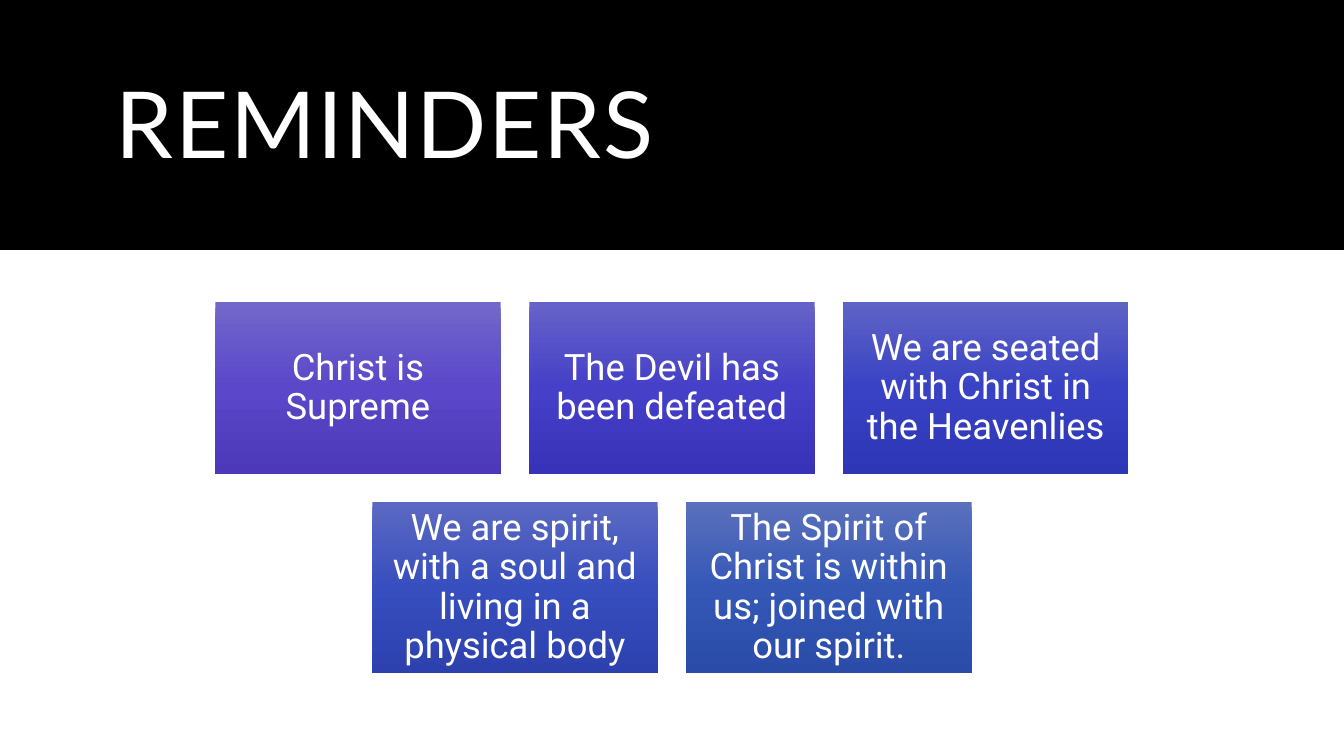
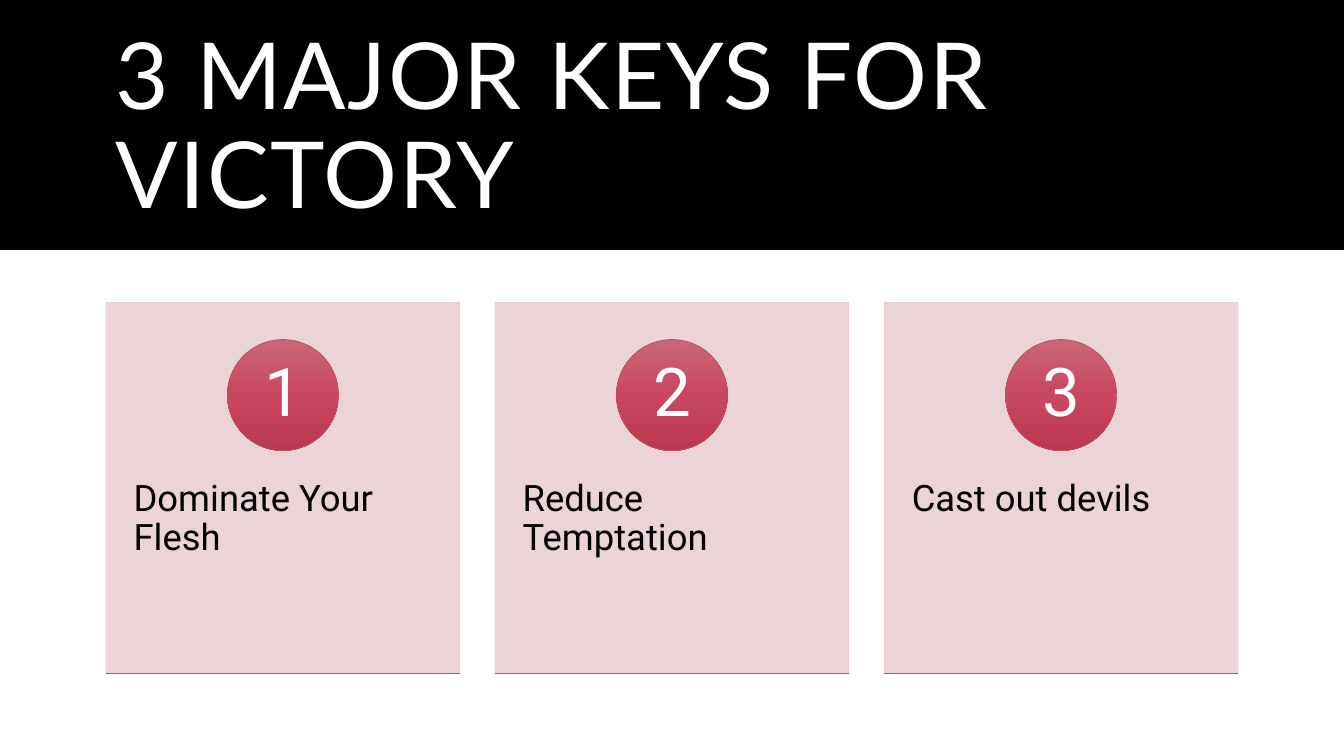
from copy import deepcopy

from lxml.etree import SubElement
from pptx import Presentation
from pptx.dml.color import RGBColor
from pptx.enum.shapes import MSO_CONNECTOR, MSO_SHAPE
from pptx.enum.text import MSO_ANCHOR, PP_ALIGN
from pptx.oxml.ns import qn
from pptx.util import Pt

# Page
SLIDE_W, SLIDE_H = 960, 540
BAND_H = 178.5
CONTENT_TOP = 216
CONTENT_H = 265

# Colours
BLACK = RGBColor(0x00, 0x00, 0x00)
WHITE = RGBColor(0xFF, 0xFF, 0xFF)
PINK = RGBColor(0xE9, 0xD0, 0xD3)
ROSE = RGBColor(0xC3, 0x4D, 0x63)
ROSE_GRADIENT = (RGBColor(0xCA, 0x67, 0x77), RGBColor(0xC9, 0x47, 0x5F),
                 RGBColor(0xB9, 0x39, 0x51))
VIOLET = (RGBColor(0x73, 0x67, 0xCA), RGBColor(0x5A, 0x47, 0xC9),
          RGBColor(0x4B, 0x39, 0xB9))
INDIGO = (RGBColor(0x66, 0x62, 0xC8), RGBColor(0x45, 0x40, 0xC7),
          RGBColor(0x37, 0x32, 0xB8))
ROYAL = (RGBColor(0x5E, 0x63, 0xC6), RGBColor(0x39, 0x42, 0xC5),
         RGBColor(0x2D, 0x36, 0xB4))
COBALT = (RGBColor(0x5C, 0x69, 0xC2), RGBColor(0x37, 0x4E, 0xBE),
          RGBColor(0x2C, 0x41, 0xAE))
STEEL = (RGBColor(0x5A, 0x70, 0xBC), RGBColor(0x35, 0x58, 0xB7),
         RGBColor(0x2A, 0x4C, 0xA8))

# Text styles
TITLE = {"name": "Lato", "size": Pt(66)}
BODY = {"name": "Roboto", "size": Pt(26)}
NUMBER = {"name": "Roboto", "size": Pt(48)}

# Content
REMINDER_ROWS = [
    [("Christ is Supreme", VIOLET),
     ("The Devil has been defeated", INDIGO),
     ("We are seated with Christ in the Heavenlies", ROYAL)],
    [("We are spirit, with a soul and living in a physical body", COBALT),
     ("The Spirit of Christ is within us; joined with our spirit.", STEEL)],
]
KEYS = ["Dominate Your Flesh", "Reduce Temptation", "Cast out devils"]


def row_lefts(count, width, gap):
    """Left edges of equal boxes centred across the slide."""
    first = (SLIDE_W - count * width - (count - 1) * gap) / 2
    return [first + i * (width + gap) for i in range(count)]


def write(shape, text, font, color=WHITE, align=PP_ALIGN.CENTER,
          anchor=MSO_ANCHOR.MIDDLE, insets=(7.2, 3.6)):
    """Write one paragraph; insets are left/right and top, or also bottom."""
    tf = shape.text_frame
    side, top, bottom = (*insets, insets[1])[:3]
    frame_format = {"word_wrap": True, "vertical_anchor": anchor,
                    "margin_left": Pt(side), "margin_right": Pt(side),
                    "margin_top": Pt(top), "margin_bottom": Pt(bottom)}
    for name, value in frame_format.items():
        setattr(tf, name, value)
    p = tf.paragraphs[0]
    p.alignment = align
    p.line_spacing = 0.9
    r = p.add_run()
    r.text = text
    for name, value in font.items():
        setattr(r.font, name, value)
    r.font.color.rgb = color
    return r


def add_box(s, kind, left, top, width, height, fill, line=None):
    """Add a shape with a plain fill, or a downward gradient from a tuple."""
    sp = s.shapes.add_shape(kind, Pt(left), Pt(top), Pt(width), Pt(height))
    sp.shadow.inherit = False
    if isinstance(fill, tuple) and not isinstance(fill, RGBColor):
        sp.fill.gradient()
        sp.fill.gradient_angle = 270
        stops = sp.element.spPr.find(".//" + qn("a:gsLst"))
        stops.append(deepcopy(stops[-1]))
        for i, stop in enumerate(sp.fill.gradient_stops):
            stop.position = i / 2
            stop.color.rgb = fill[i]
    else:
        sp.fill.solid()
        sp.fill.fore_color.rgb = fill
    if line is None:
        sp.line.fill.background()
    else:
        sp.line.color.rgb = line
        sp.line.width = Pt(0.5)
    return sp


def set_opacity(sp, percent):
    for color in sp.element.spPr.iter(qn("a:srgbClr")):
        SubElement(color, qn("a:alpha")).set("val", str(percent * 1000))


def add_rule(s, left, top, width):
    rule = s.shapes.add_connector(MSO_CONNECTOR.STRAIGHT, Pt(left), Pt(top),
                                  Pt(left + width), Pt(top))
    rule.line.color.rgb = ROSE
    rule.line.width = Pt(0.5)
    SubElement(rule.element.spPr, qn("a:effectLst"))


def add_titled_slide(prs, title):
    """Blank slide with the black band and its title."""
    s = prs.slides.add_slide(prs.slide_layouts[6])
    s.background.fill.solid()
    s.background.fill.fore_color.rgb = WHITE
    add_box(s, MSO_SHAPE.RECTANGLE, 0, 0, SLIDE_W, BAND_H, BLACK)
    box = s.shapes.add_textbox(Pt(75.6), Pt(25.2), Pt(808.6), Pt(133.9))
    r = write(box, title, TITLE, align=PP_ALIGN.LEFT)
    r.font._element.set("spc", "120")
    return s


def add_tiles(s, rows):
    """Rows of gradient tiles, each row centred."""
    width, height, gap = 203.8, 122.3, 20.4
    for i, row in enumerate(rows):
        top = CONTENT_TOP + i * (height + gap)
        for left, (text, gradient) in zip(row_lefts(len(row), width, gap), row):
            tile = add_box(s, MSO_SHAPE.RECTANGLE, left, top, width, height,
                           gradient)
            write(tile, text, BODY, insets=(8.2, 8.2))


def add_key_cards(s, keys):
    """Numbered cards, each with a disc on top and a rule below."""
    width, gap, disc = 252.7, 25.2, 79.4
    for i, left in enumerate(row_lefts(len(keys), width, gap)):
        card = add_box(s, MSO_SHAPE.RECTANGLE, left, CONTENT_TOP, width,
                       CONTENT_H, PINK, PINK)
        set_opacity(card, 90)
        write(card, keys[i], BODY, BLACK, PP_ALIGN.LEFT, MSO_ANCHOR.TOP,
              (19.7, 126.7, 26))
        badge = add_box(s, MSO_SHAPE.OVAL, left + (width - disc) / 2,
                        CONTENT_TOP + 26.5, disc, disc, ROSE_GRADIENT, ROSE)
        write(badge, str(i + 1), NUMBER, insets=(6.2, 0.9))
        add_rule(s, left, CONTENT_TOP + CONTENT_H, width)


def main():
    prs = Presentation()
    prs.slide_width, prs.slide_height = Pt(SLIDE_W), Pt(SLIDE_H)
    add_tiles(add_titled_slide(prs, "REMINDERS"), REMINDER_ROWS)
    add_key_cards(add_titled_slide(prs, "3 MAJOR KEYS FOR VICTORY"), KEYS)
    prs.save("out.pptx")


if __name__ == "__main__":
    main()
